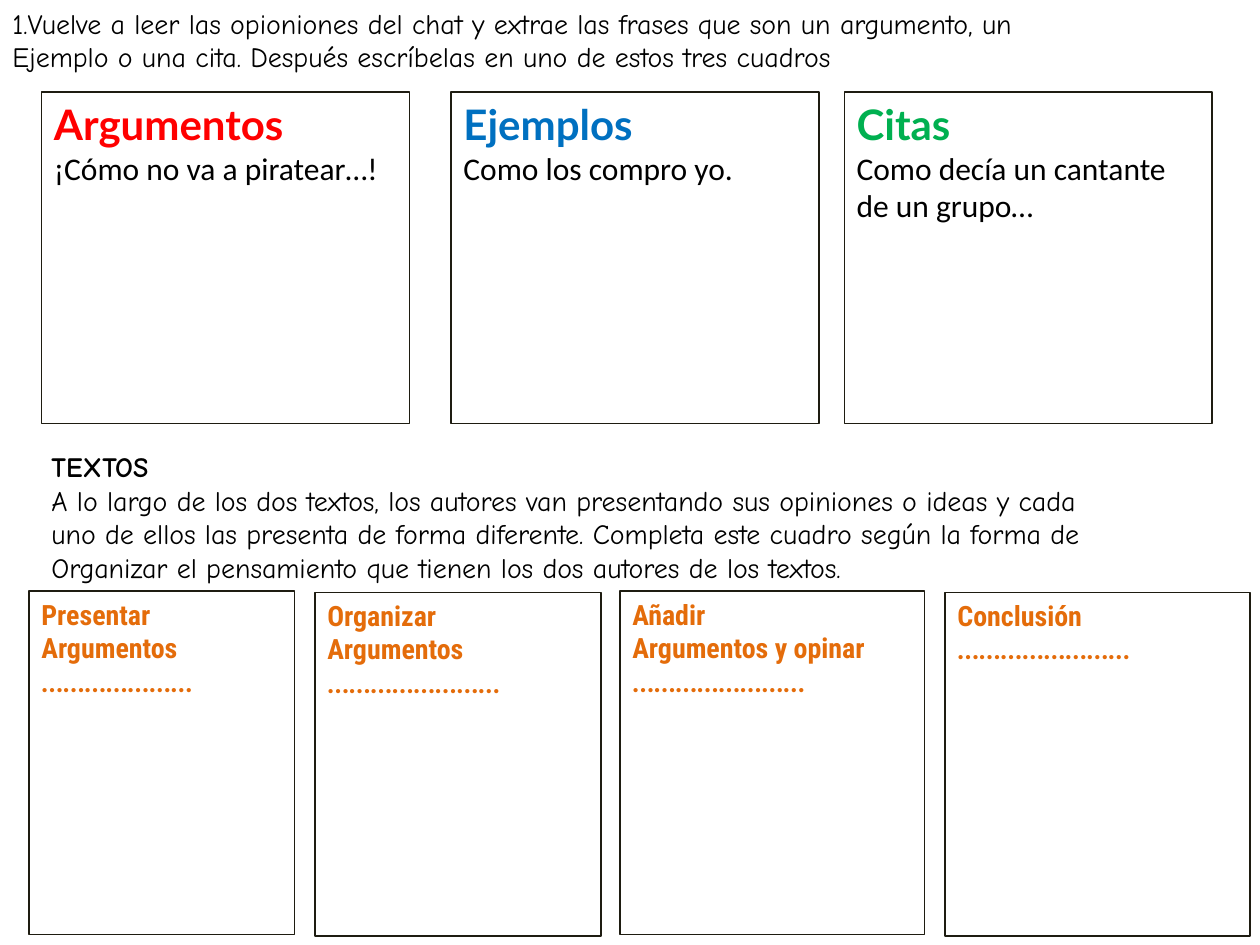
from pptx import Presentation
from pptx.dml.color import RGBColor
from pptx.enum.shapes import MSO_SHAPE
from pptx.enum.text import MSO_ANCHOR, PP_ALIGN
from pptx.util import Inches, Pt

RECT = MSO_SHAPE.RECTANGLE
TOP = MSO_ANCHOR.TOP
LEFT = PP_ALIGN.LEFT

BLACK = RGBColor(0x00, 0x00, 0x00)
BORDER = RGBColor(0x1E, 0x1C, 0x11)
RED = RGBColor(0xFF, 0x00, 0x00)
BLUE = RGBColor(0x00, 0x70, 0xC0)
GREEN = RGBColor(0x00, 0xB0, 0x50)
ORANGE = RGBColor(0xE4, 0x6C, 0x0A)

INSTRUCTION = [
    "1.Vuelve a leer las opioniones del chat y extrae las frases que son un argumento, un",
    "Ejemplo o una cita. Después escríbelas en uno de estos tres cuadros",
]
TEXTS_HEADING = "TEXTOS"
TEXTS_TASK = [
    "A lo largo de los dos textos, los autores van presentando sus opiniones o ideas y cada",
    "uno de ellos las presenta de forma diferente. Completa este cuadro según la forma de",
    "Organizar el pensamiento que tienen los dos autores de los textos.",
]
PHRASE_BOXES = [
    (0.33, "Argumentos", RED, "¡Cómo no va a piratear…!"),
    (3.58, "Ejemplos", BLUE, "Como los compro yo."),
    (6.7, "Citas", GREEN, "Como decía un cantante de un grupo…"),
]
THOUGHT_BOXES = [
    (0.23, 4.69, 2.11, ["Presentar", "Argumentos"], 7),
    (2.5, 4.7, 2.27, ["Organizar", "Argumentos"], 8),
    (4.92, 4.69, 2.42, ["Añadir", "Argumentos y opinar"], 8),
    (7.5, 4.7, 2.42, ["Conclusión"], 8),
]


def write_lines(sp, lines):
    tf = sp.text_frame
    tf.word_wrap = True
    tf.vertical_anchor = TOP
    tf.text = "\n".join(line[0] for line in lines)
    for p, (_, font, size, color, bold) in zip(tf.paragraphs, lines):
        p.alignment = LEFT
        f = p.runs[0].font
        f.name, f.size, f.bold = font, Pt(size), bold
        f.color.rgb = color


def add_text(s, x, y, w, h, lines):
    sp = s.shapes.add_textbox(Inches(x), Inches(y), Inches(w), Inches(h))
    write_lines(sp, lines)


def add_box(s, x, y, w, h, lines):
    sp = s.shapes.add_shape(RECT, Inches(x), Inches(y), Inches(w), Inches(h))
    sp.shadow.inherit = False
    sp.fill.background()
    sp.line.color.rgb = BORDER
    sp.line.width = Pt(0.75)
    write_lines(sp, lines)


def body_lines(texts):
    return [(text, "Comic Neue", 16, BLACK, False) for text in texts]


def main():
    prs = Presentation()
    prs.slide_width, prs.slide_height = Inches(10), Inches(7.5)
    s = prs.slides.add_slide(prs.slide_layouts[6])

    for x, heading, color, phrase in PHRASE_BOXES:
        add_box(s, x, 0.73, 2.92, 2.63, [
            (heading, "Lato", 24, color, True),
            (phrase, "Calibri", 18, BLACK, False),
        ])

    add_text(s, 0, 0, 8.83, 0.64, body_lines(INSTRUCTION))
    heading = (TEXTS_HEADING, "Comic Neue", 16, BLACK, True)
    add_text(s, 0.31, 3.52, 9.2, 1.18, [heading] + body_lines(TEXTS_TASK))

    for x, y, w, labels, dots in THOUGHT_BOXES:
        lines = [(label, "Roboto Condensed", 16, ORANGE, True) for label in labels]
        lines.append(("…" * dots, "Lato", 16, ORANGE, True))
        add_box(s, x, y, w, 2.73, lines)

    prs.save("out.pptx")


if __name__ == "__main__":
    main()
